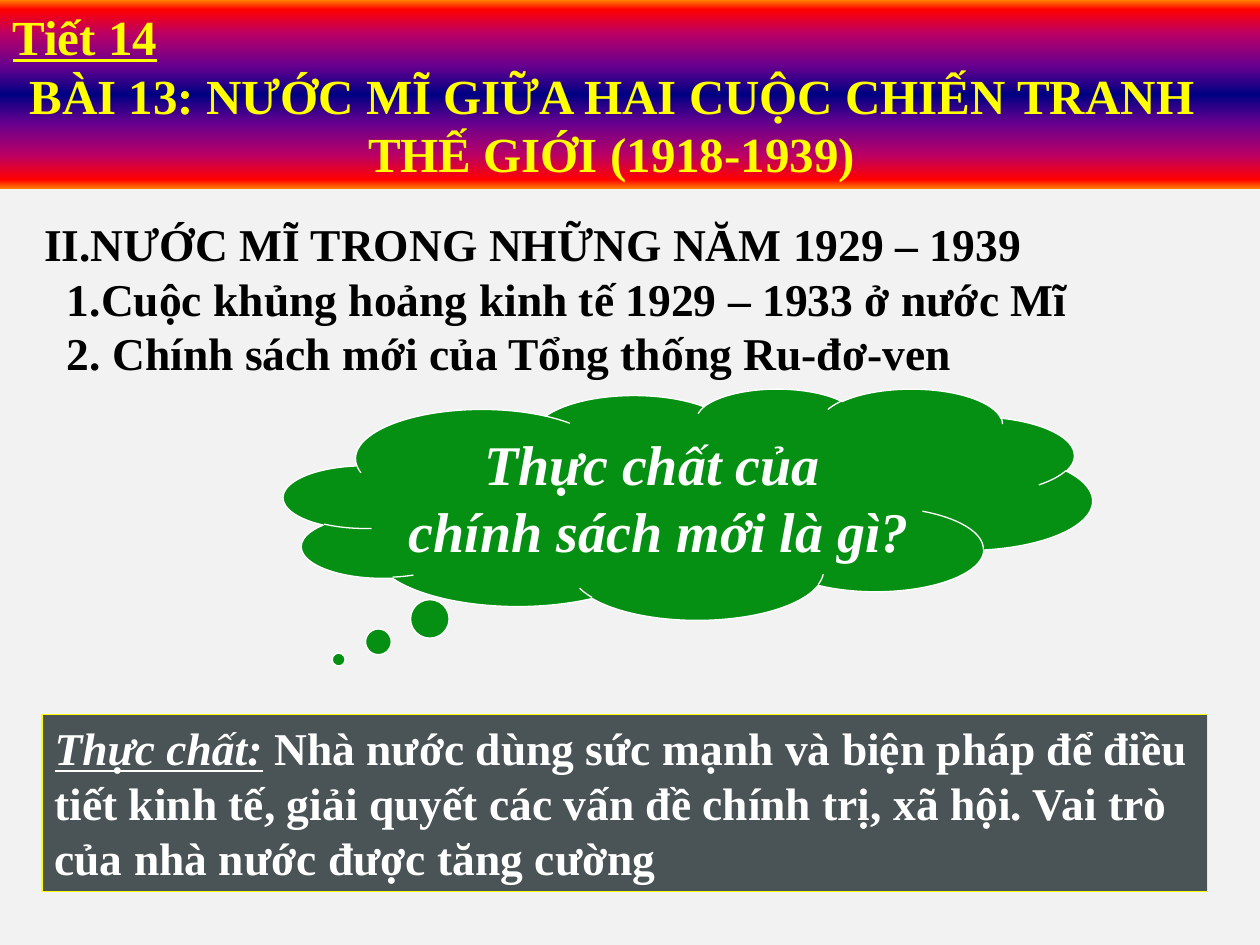
import pptx
import pptx.dml.color
import pptx.enum.shapes
import pptx.enum.text
import pptx.oxml
import pptx.oxml.ns
import pptx.util
from pptx.util import Cm

ALIGN = pptx.enum.text.PP_ALIGN
ANCHOR = pptx.enum.text.MSO_ANCHOR
SHAPE = pptx.enum.shapes.MSO_SHAPE
BANNER_STOPS = [(0, "FF8200"), (5, "FF0000"), (18, "BA0066"), (35, "66008F"), (50, "000082"),
                (65, "66008F"), (82, "BA0066"), (95, "FF0000"), (100, "FF8200")]


def rgb(value):
    return pptx.dml.color.RGBColor.from_string(value)


def write(paragraph, text, size, color, **formats):
    """Add a run; formats are font attributes such as italic or underline."""
    run = paragraph.add_run()
    run.text = text
    values = {"name": "Times New Roman", "size": pptx.util.Pt(size), "bold": True, **formats}
    for name, value in values.items():
        setattr(run.font, name, value)
    run.font.color.rgb = rgb(color)


def add_paragraphs(frame, count, alignment=ALIGN.LEFT):
    """Return the frame's paragraphs, extended to count and aligned."""
    for _ in range(count - 1):
        frame.add_paragraph()
    for paragraph in frame.paragraphs:
        paragraph.alignment = alignment
    return frame.paragraphs


def set_margin(paragraph, side, length):
    """Indent one side of a paragraph: marL or marR."""
    paragraph._p.get_or_add_pPr().set(side, str(length))


def set_frame(frame, anchor, wrap=True):
    values = {"word_wrap": wrap, "vertical_anchor": anchor,
              "auto_size": pptx.enum.text.MSO_AUTO_SIZE.NONE}
    for name, value in values.items():
        setattr(frame, name, value)


def add_filled_shape(slide, kind, box, fill, line):
    shape = slide.shapes.add_shape(kind, *box)
    shape.shadow.inherit = False
    shape.fill.solid()
    shape.fill.fore_color.rgb = rgb(fill)
    shape.line.color.rgb = rgb(line)
    shape.line.width = pptx.util.Pt(0.75)
    return shape


def fill_gradient(shape, stops):
    shape.fill.gradient()
    shape.fill.gradient_angle = 90
    stop_list = shape._element.spPr.find(".//" + pptx.oxml.ns.qn("a:gsLst"))
    for stop in list(stop_list):
        stop_list.remove(stop)
    for position, color in stops:
        stop_list.append(pptx.oxml.parse_xml(
            f'<a:gs {pptx.oxml.ns.nsdecls("a")} pos="{position * 1000}">'
            f'<a:srgbClr val="{color}"/></a:gs>'))


def format_banner(title, box):
    title.left, title.top, title.width, title.height = box
    fill_gradient(title, BANNER_STOPS)
    set_frame(title.text_frame, ANCHOR.MIDDLE)
    period, lesson, years = add_paragraphs(title.text_frame, 3, ALIGN.CENTER)
    period.alignment = ALIGN.LEFT
    write(period, "Tiết 14", 28, "FFFF00", underline=True)
    write(lesson, "BÀI 13: NƯỚC MĨ GIỮA HAI CUỘC CHIẾN TRANH", 28, "FFFF00")
    write(years, "THẾ GIỚI (1918-1939)", 28, "FFFF00")
    set_margin(lesson, "marR", Cm(0.74))


def add_outline(slide, box, heading, items):
    frame = slide.shapes.add_textbox(*box).text_frame
    set_frame(frame, ANCHOR.TOP)
    first, *others = add_paragraphs(frame, 1 + len(items))
    write(first, heading, 26, "000000")
    for paragraph, item in zip(others, items):
        write(paragraph, item, 26, "000000")
        set_margin(paragraph, "marL", Cm(0.46))


def add_question(slide, box, lines):
    cloud = add_filled_shape(slide, SHAPE.CLOUD_CALLOUT, box, "069013", "FFFFFF")
    cloud.adjustments[0] = -0.432
    cloud.adjustments[1] = 0.673
    set_frame(cloud.text_frame, ANCHOR.TOP, wrap=False)
    for paragraph, line in zip(add_paragraphs(cloud.text_frame, len(lines), ALIGN.CENTER), lines):
        write(paragraph, line, 32, "FFFFFF", italic=True)


def add_answer(slide, box, label, text):
    panel = add_filled_shape(slide, SHAPE.RECTANGLE, box, "4A5356", "FFFF00")
    set_frame(panel.text_frame, ANCHOR.TOP)
    paragraph = add_paragraphs(panel.text_frame, 1)[0]
    write(paragraph, label, 26, "FFFFFF", italic=True, underline=True)
    write(paragraph, " " + text, 26, "FFFFFF")


def main():
    presentation = pptx.Presentation()
    presentation.slide_width, presentation.slide_height = Cm(25.4), Cm(19.05)
    slide = presentation.slides.add_slide(presentation.slide_layouts.get_by_name("Title Only"))
    slide.background.fill.solid()
    slide.background.fill.fore_color.rgb = rgb("F2F2F2")

    format_banner(slide.shapes.title, (0, 0, presentation.slide_width, Cm(3.81)))
    add_outline(slide, (Cm(0.64), Cm(4.23), Cm(21.39), Cm(3.56)),
                "II.NƯỚC MĨ TRONG NHỮNG NĂM 1929 – 1939",
                ["1.Cuộc khủng hoảng kinh tế 1929 – 1933 ở nước Mĩ",
                 "2. Chính sách mới của Tổng thống Ru-đơ-ven"])
    add_question(slide, (Cm(5.72), Cm(7.83), Cm(16.3), Cm(4.66)),
                 ["Thực chất của ", "chính sách mới là gì?"])
    add_answer(slide, (Cm(0.85), Cm(14.4), Cm(23.5), Cm(3.58)), "Thực chất:",
               "Nhà nước dùng sức mạnh và biện pháp để điều tiết kinh tế, giải quyết các "
               "vấn đề chính trị, xã hội. Vai trò của nhà nước được tăng cường")
    presentation.save("out.pptx")


if __name__ == "__main__":
    main()
